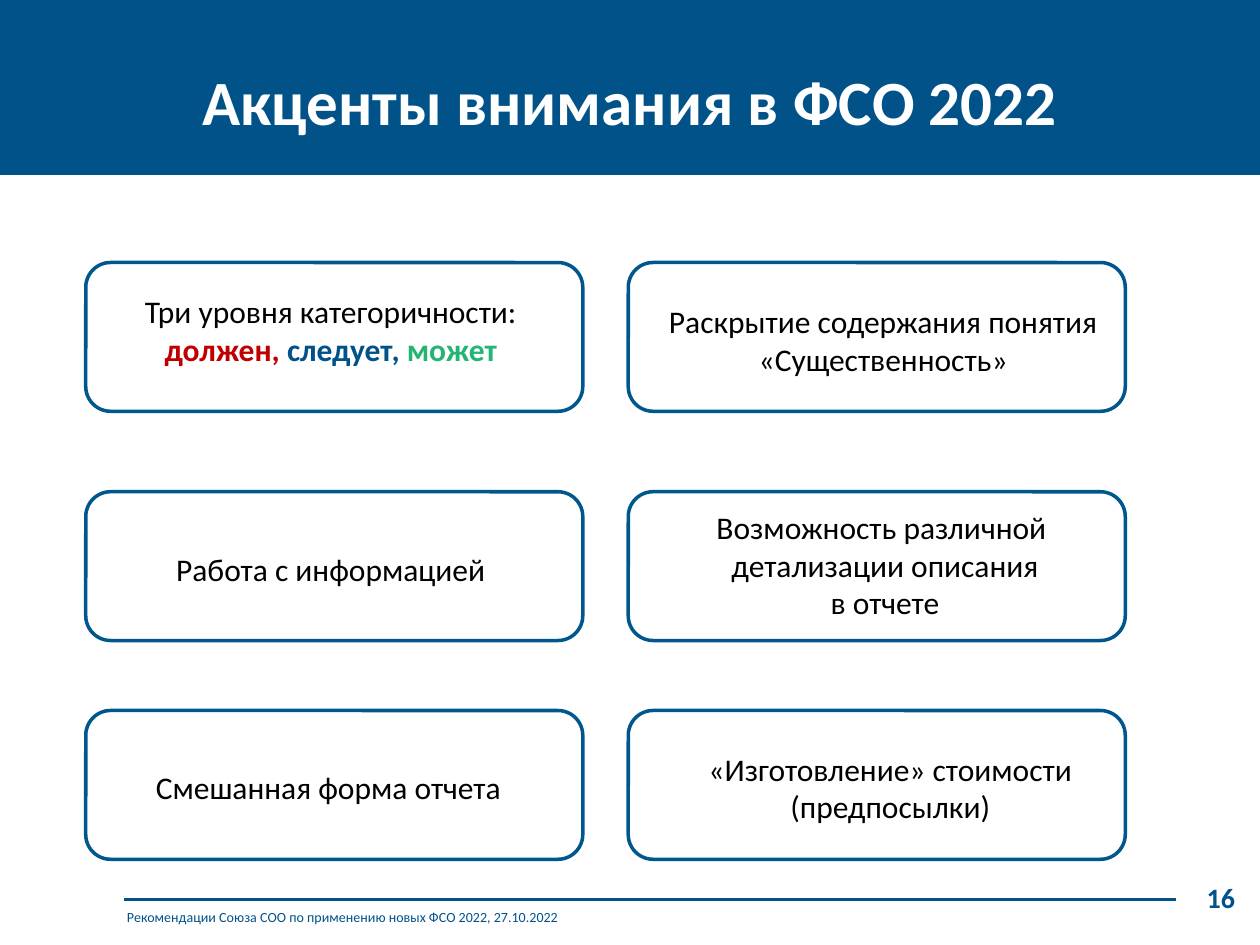
import pptx
import pptx.dml.color
import pptx.enum.shapes
import pptx.enum.text
import pptx.oxml
import pptx.util
from dataclasses import dataclass

Pt = pptx.util.Pt
Align = pptx.enum.text.PP_ALIGN
Shape = pptx.enum.shapes.MSO_SHAPE


@dataclass(frozen=True)
class Theme:
    font: str = "Calibri"
    blue: str = "015289"
    border: str = "00578E"
    red: str = "C00000"
    green: str = "24B574"
    white: str = "FFFFFF"
    black: str = "000000"
    title: int = 36
    body: int = 18
    number: int = 16
    footer: int = 8


THEME = Theme()

# Card grid
COLUMNS = (49, 359)
ROWS = (150, 281, 406)
CARD_WIDTH, CARD_HEIGHT = 284, 85

# Card captions: left, top, width, height, alignment, lines
CAPTIONS = [
    (57.6, 163.4, 262.8, 51.1, Align.CENTER, ["Три уровня категоричности:"]),
    (371.5, 169.2, 266.4, 51.1, Align.CENTER,
     ["Раскрытие содержания понятия «Существенность»"]),
    (93.6, 311, 208, 28.8, Align.LEFT, ["Работа с информацией"]),
    (386.6, 286.6, 238.3, 72.7, Align.CENTER,
     ["Возможность различной ", "детализации описания\vв отчете"]),
    (82, 435.6, 218.2, 28.8, Align.LEFT, ["Смешанная форма отчета"]),
    (386, 424.8, 245.5, 51.1, Align.CENTER,
     ["«Изготовление» стоимости", "(предпосылки)"]),
]
LEVELS = [("должен, ", THEME.red), ("следует, ", THEME.blue),
          ("может", THEME.green)]


def rgb(value):
    return pptx.dml.color.RGBColor.from_string(value)


def format_span(span, size, color, bold=False):
    span.font.name = THEME.font
    span.font.size = Pt(size)
    span.font.bold = bold
    span.font.color.rgb = rgb(color)


def add_text(page, left, top, width, height, lines, size, color,
             align=Align.LEFT, bold=False):
    box = page.shapes.add_textbox(Pt(left), Pt(top), Pt(width), Pt(height))
    box.text_frame.word_wrap = True
    box.text_frame.text = "\n".join(lines)
    for para in box.text_frame.paragraphs:
        para.alignment = align
        for span in para.runs:
            format_span(span, size, color, bold)
    return box


def add_colored_line(box, parts):
    para = box.text_frame.add_paragraph()
    para.alignment = Align.CENTER
    for text, color in parts:
        span = para.add_run()
        span.text = text
        format_span(span, THEME.body, color, bold=True)


def add_band(page, left, top, width, height, color):
    band = page.shapes.add_shape(Shape.RECTANGLE, Pt(left), Pt(top),
                                 Pt(width), Pt(height))
    band.shadow.inherit = False
    band.fill.solid()
    band.fill.fore_color.rgb = rgb(color)
    band.line.fill.background()


def add_card(page, left, top):
    card = page.shapes.add_shape(Shape.ROUNDED_RECTANGLE, Pt(left), Pt(top),
                                 Pt(CARD_WIDTH), Pt(CARD_HEIGHT))
    card.shadow.inherit = False
    card.fill.background()
    card.line.color.rgb = rgb(THEME.border)
    card.line.width = Pt(2)


def add_rule(page, left, right, top):
    rule = page.shapes.add_connector(
        pptx.enum.shapes.MSO_CONNECTOR.STRAIGHT,
        Pt(left), Pt(top), Pt(right), Pt(top))
    rule.line.color.rgb = rgb(THEME.blue)
    rule.line.width = Pt(1.5)
    rule._element.spPr.append(pptx.oxml.parse_xml(
        '<a:effectLst xmlns:a='
        '"http://schemas.openxmlformats.org/drawingml/2006/main"/>'))


def main():
    deck = pptx.Presentation()
    deck.slide_width, deck.slide_height = Pt(720), Pt(540)
    page = deck.slides.add_slide(deck.slide_layouts[6])

    # Footer
    add_text(page, 524.2, 499.7, 188.6, 26.6, ["16"], THEME.number,
             THEME.blue, Align.RIGHT, bold=True)
    add_rule(page, 70.8, 672, 514)
    add_text(page, 65.5, 515.5, 600.5, 17.3,
             ["Рекомендации Союза СОО по применению новых ФСО 2022, 27.10.2022"],
             THEME.footer, THEME.blue)

    # Title band
    add_band(page, 0, 0, 720, 100, THEME.blue)
    add_text(page, 0, 32.4, 720, 51.1, ["Акценты внимания в ФСО 2022"],
             THEME.title, THEME.white, Align.CENTER, bold=True)

    # Cards
    for top in ROWS:
        for left in COLUMNS:
            add_card(page, left, top)

    # Captions, with the three coloured levels in the first
    captions = [add_text(page, *place, lines, THEME.body, THEME.black, align)
                for *place, align, lines in CAPTIONS]
    add_colored_line(captions[0], LEVELS)

    deck.save("out.pptx")


if __name__ == "__main__":
    main()
